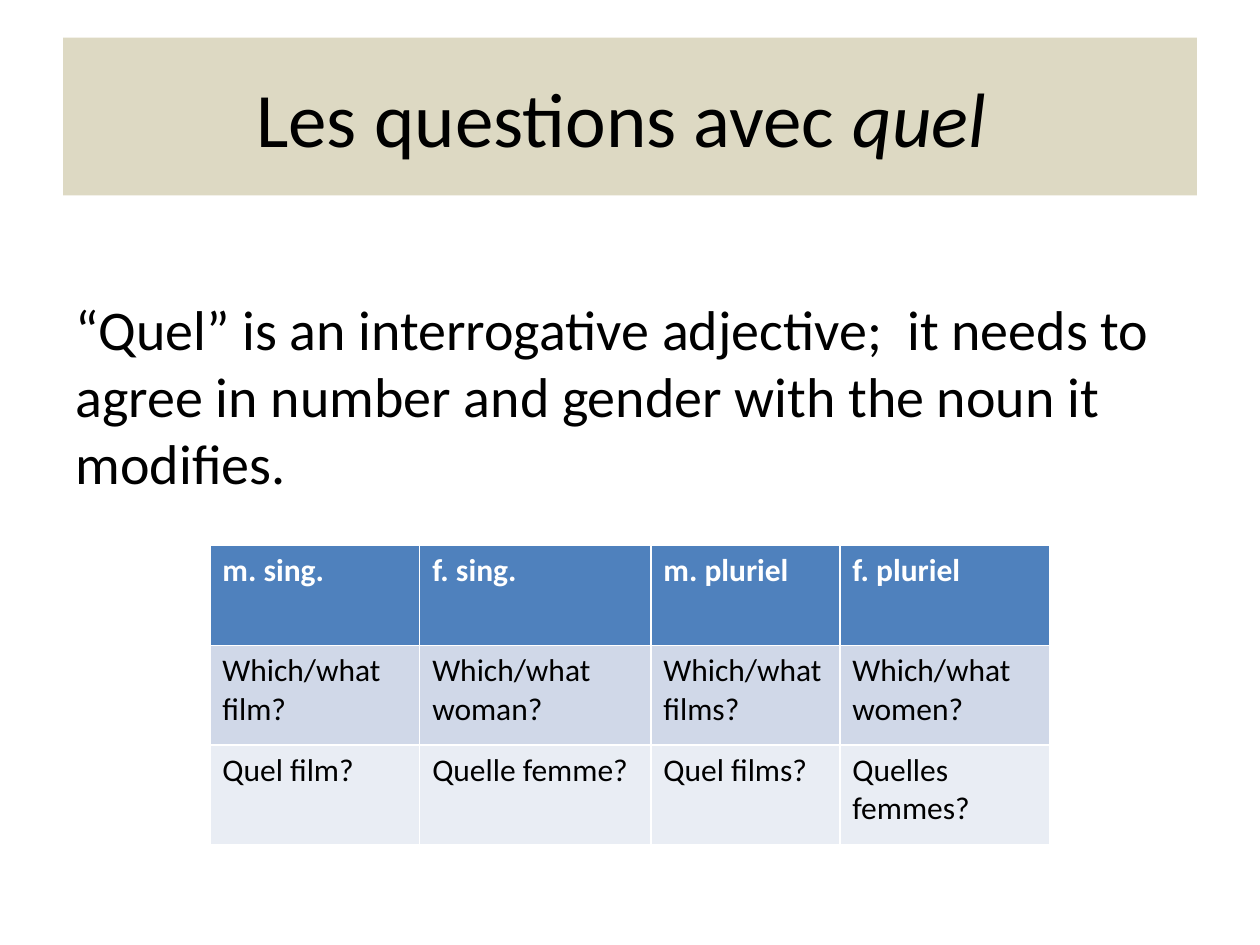
"""Build a French grammar slide about questions with quel."""
import pptx
import pptx.dml.color
import pptx.enum.text
import pptx.oxml.ns
import pptx.util
from lxml import etree
from pptx.util import Cm

COLORS = {
    "band": "DDD9C3",
    "text": "000000",
    "header": "4F81BD",
    "header_text": "FFFFFF",
    "english": "D0D8E8",
    "french": "E9EDF4",
}
TITLE = {"name": "Calibri", "size": pptx.util.Pt(44)}
BODY = {"name": "Calibri", "size": pptx.util.Pt(32)}
CELL = {"name": "Calibri", "size": pptx.util.Pt(18), "bold": False}
HEADER = {**CELL, "bold": True}

COL_WIDTHS = [4.23, 4.66, 3.81, 4.23]
ROW_HEIGHT = 2.01
ROWS = [
    ("header", "header_text", HEADER,
     ["m. sing.", "f. sing.", "m. pluriel", "f. pluriel"]),
    ("english", "text", CELL,
     ["Which/what film?", "Which/what woman?", "Which/what films?", "Which/what women?"]),
    ("french", "text", CELL,
     ["Quel film?", "Quelle femme?", "Quel films?", "Quelles femmes?"]),
]


def rgb(key):
    return pptx.dml.color.RGBColor.from_string(COLORS[key])


def place(sp, left, top, width, height):
    sp.left, sp.top, sp.width, sp.height = map(Cm, (left, top, width, height))


def paint(sp, key):
    sp.fill.solid()
    sp.fill.fore_color.rgb = rgb(key)


def add_run(p, text, fmt, color="text"):
    r = p.add_run()
    r.text = text
    for name, value in fmt.items():
        setattr(r.font, name, value)
    r.font.color.rgb = rgb(color)


def add_title(s):
    sp = s.shapes.title
    place(sp, 1.27, 0.76, 22.86, 3.18)
    paint(sp, "band")
    tf = sp.text_frame
    tf.vertical_anchor = pptx.enum.text.MSO_ANCHOR.MIDDLE
    p = tf.paragraphs[0]
    p.alignment = pptx.enum.text.PP_ALIGN.CENTER
    add_run(p, "Les questions avec ", TITLE)
    add_run(p, "quel ", {**TITLE, "italic": True})


def add_body(s, text):
    sp = s.placeholders[1]
    place(sp, 1.27, 4.45, 22.86, 12.57)
    tf = sp.text_frame
    tf.margin_top = Cm(1.48)
    p = tf.paragraphs[0]
    p.space_before = pptx.util.Pt(0)
    pPr = p._p.get_or_add_pPr()
    pPr.set("marL", "0")
    pPr.set("indent", "0")
    etree.SubElement(pPr, pptx.oxml.ns.qn("a:buNone"))
    add_run(p, text, BODY)


def add_forms_table(s):
    size = sum(COL_WIDTHS), ROW_HEIGHT * len(ROWS)
    frame = s.shapes.add_table(len(ROWS), len(COL_WIDTHS), Cm(4.23), Cm(11), *map(Cm, size))
    table = frame.table
    for column, width in zip(table.columns, COL_WIDTHS):
        column.width = Cm(width)
    for row, (fill, color, fmt, texts) in zip(table.rows, ROWS):
        row.height = Cm(ROW_HEIGHT)
        for cell, text in zip(row.cells, texts):
            paint(cell, fill)
            add_run(cell.text_frame.paragraphs[0], text, fmt, color)


def main():
    prs = pptx.Presentation()
    prs.slide_width, prs.slide_height = Cm(25.4), Cm(19.05)
    s = prs.slides.add_slide(prs.slide_layouts[1])
    add_title(s)
    add_body(s, "“Quel” is an interrogative adjective;  it needs to agree "
                "in number and gender with the noun it modifies.")
    add_forms_table(s)
    prs.save("out.pptx")


if __name__ == "__main__":
    main()
